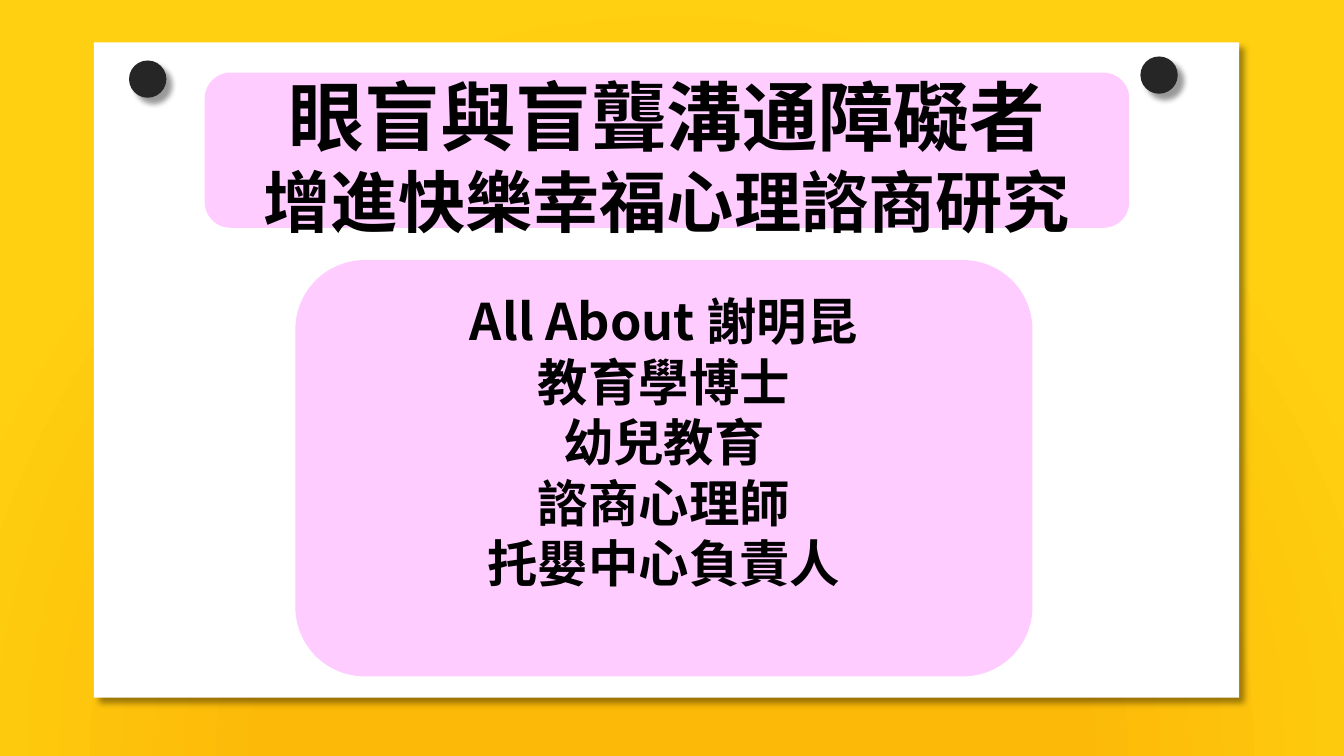
from lxml import etree
from pptx import Presentation
from pptx import util as u
from pptx.dml.color import RGBColor
from pptx.enum import shapes, text
from pptx.oxml.ns import qn

TITLE = [("眼盲與盲聾溝通障礙者", 54), ("增進快樂幸福心理諮商研究", 48)]
PROFILE = [(line, 36) for line in
           ("All About 謝明昆", "教育學博士", "幼兒教育", "諮商心理師", "托嬰中心負責人")]

FONT = "Noto Sans CJK SC"
LINE_HEIGHT = 1.2
AMBER = RGBColor(0xFC, 0xB9, 0x07)
YELLOW = RGBColor(0xFF, 0xD0, 0x11)
WHITE = RGBColor(0xFF, 0xFF, 0xFF)
CHARCOAL = RGBColor(0x26, 0x26, 0x26)
PINK = RGBColor(0xFF, 0xCC, 0xFF)
BLACK = RGBColor(0, 0, 0)

WIDTH, HEIGHT = u.Inches(13.33), u.Inches(7.5)
CARD = (6.98, 5.6, 85.22, 86.67)
PIN_SIZE = (2.78, 4.93)
PINS = [(9.6, 8), (84.85, 7.47)]
PROFILE_PANEL = (21.98, 34.4, 54.84, 55.07)
TITLE_PANEL = (15.23, 9.6, 68.79, 20.53)

RECT = shapes.MSO_SHAPE.RECTANGLE
OVAL = shapes.MSO_SHAPE.OVAL
ROUNDED = shapes.MSO_SHAPE.ROUNDED_RECTANGLE


def add_block(slide, kind, percents, color):
    left, top, width, height = percents
    block = slide.shapes.add_shape(
        kind, int(WIDTH * left / 100), int(HEIGHT * top / 100),
        int(WIDTH * width / 100), int(HEIGHT * height / 100))
    block.shadow.inherit = False
    block.fill.solid()
    block.fill.fore_color.rgb = color
    block.line.fill.background()
    return block


def cast_shadow(block):
    effects = block._element.spPr.find(qn("a:effectLst"))
    shadow = etree.SubElement(
        effects, qn("a:outerShdw"), blurRad=str(u.Pt(4)), dist=str(u.Pt(6)),
        dir=str(45 * 60000), algn="tl", rotWithShape="0")
    color = etree.SubElement(shadow, qn("a:srgbClr"), val=str(BLACK))
    etree.SubElement(color, qn("a:alpha"), val="40000")


def write_lines(block, lines, inset_top, inset_bottom):
    frame = block.text_frame
    frame.word_wrap = True
    frame.vertical_anchor = text.MSO_ANCHOR.MIDDLE
    frame.margin_top = u.Inches(inset_top)
    frame.margin_bottom = u.Inches(inset_bottom)
    for index, (line, size) in enumerate(lines):
        paragraph = frame.add_paragraph() if index else frame.paragraphs[0]
        paragraph.text = line
        paragraph.alignment = text.PP_ALIGN.CENTER
        paragraph.line_spacing = u.Pt(size * LINE_HEIGHT)
        font = paragraph.font
        font.size = u.Pt(size)
        font.bold = True
        font.color.rgb = BLACK
        font.name = FONT
        etree.SubElement(paragraph._p.pPr.find(qn("a:defRPr")), qn("a:ea"), typeface=FONT)


def paint_background(slide):
    fill = slide.background.fill
    fill.gradient()
    for stop, position, color in zip(fill.gradient_stops, (0.51, 1), (AMBER, YELLOW)):
        stop.position = position
        stop.color.rgb = color
    gradient = slide.background._cSld.find(".//" + qn("a:gradFill"))
    linear = gradient.find(qn("a:lin"))
    radial = etree.Element(qn("a:path"), path="circle")
    etree.SubElement(radial, qn("a:fillToRect"), l="50000", t="130000", r="50000", b="-30000")
    gradient.replace(linear, radial)


def main():
    deck = Presentation()
    deck.slide_width, deck.slide_height = WIDTH, HEIGHT
    slide = deck.slides.add_slide(deck.slide_layouts[6])
    paint_background(slide)
    cast_shadow(add_block(slide, RECT, CARD, WHITE))
    for pin in PINS:
        cast_shadow(add_block(slide, OVAL, pin + PIN_SIZE, CHARCOAL))
    write_lines(add_block(slide, ROUNDED, PROFILE_PANEL, PINK), PROFILE, 0.12, 0.65)
    write_lines(add_block(slide, ROUNDED, TITLE_PANEL, PINK), TITLE, 0.1, 0)
    deck.save("out.pptx")


if __name__ == "__main__":
    main()
